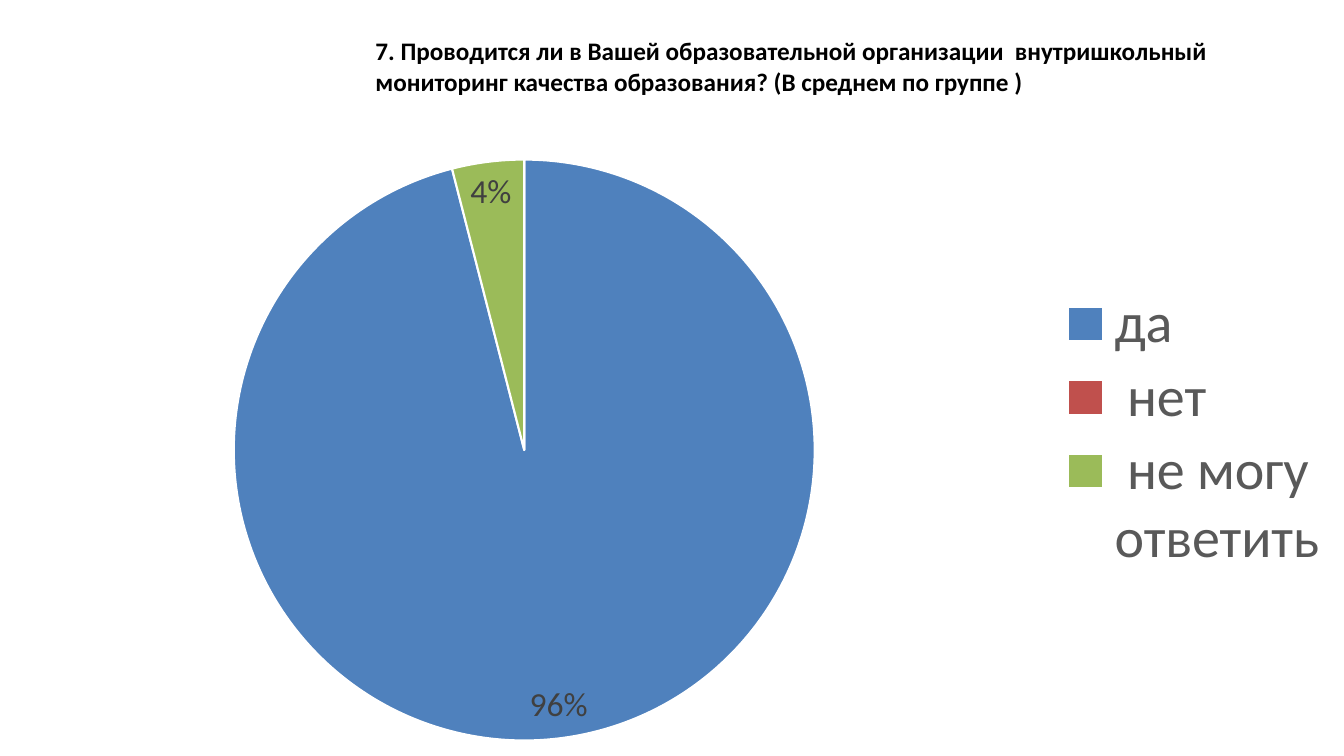
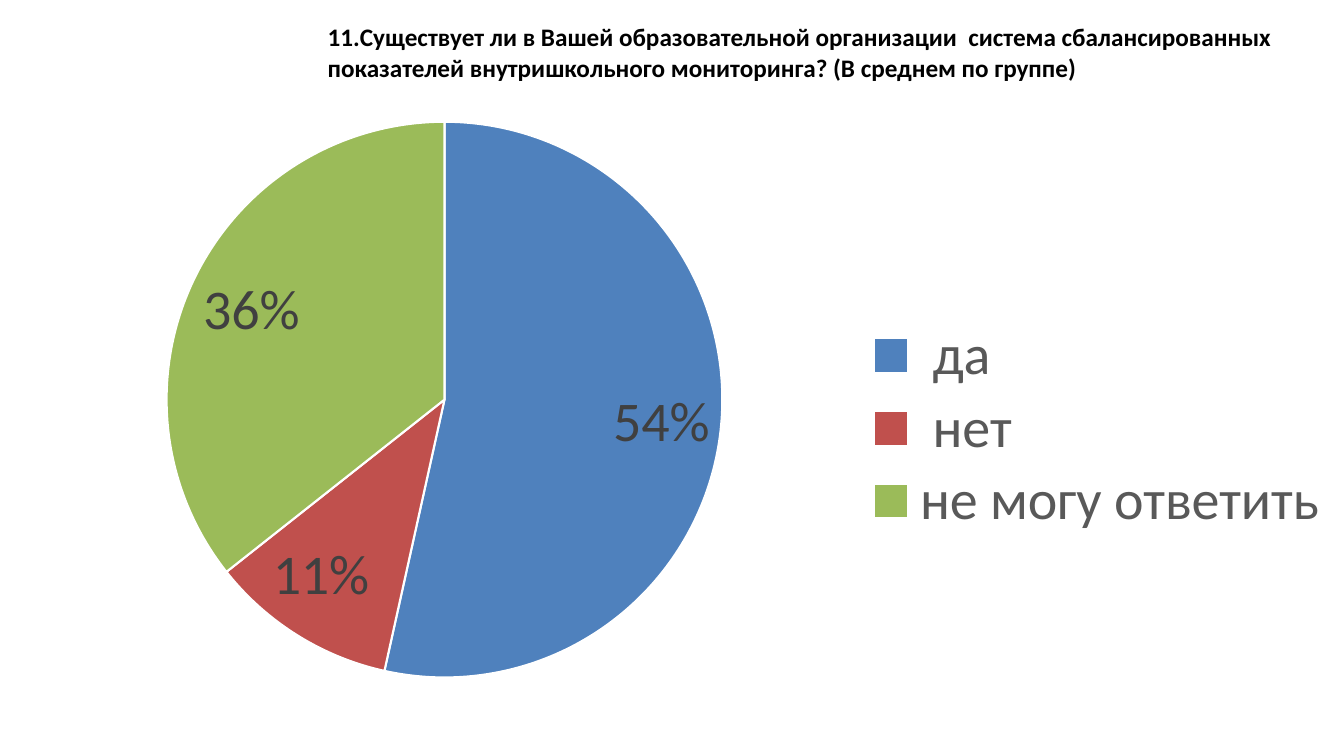
from lxml import etree
from pptx import Presentation
from pptx.chart.data import CategoryChartData
from pptx.dml.color import RGBColor
from pptx.enum.chart import XL_CHART_TYPE, XL_LABEL_POSITION, XL_LEGEND_POSITION
from pptx.enum.text import MSO_AUTO_SIZE
from pptx.oxml.ns import qn
from pptx.util import Pt

PIE = XL_CHART_TYPE.PIE
BEST_FIT = XL_LABEL_POSITION.BEST_FIT
LEGEND_RIGHT = XL_LEGEND_POSITION.RIGHT
GROW = MSO_AUTO_SIZE.SHAPE_TO_FIT_TEXT

FONT = "Calibri"
SLIDE_WIDTH, SLIDE_HEIGHT = 960, 540
LEGEND_SIZE = 40
COLORS = {
    "title": "000000",
    "legend": "595959",
    "label": "404040",
    "edge": "FFFFFF",
    "yes": "4F81BD",
    "no": "C0504D",
    "unsure": "9BBB59",
}
ANSWERS = ("yes", "no", "unsure")

# Boxes are (left, top, width, height) in points on the slide
QUESTIONS = [
    {
        "title": "7. Проводится ли в Вашей образовательной организации  внутришкольный "
                 "мониторинг качества образования? (В среднем по группе )",
        "title_box": (261, 22, 636, 73),
        "chart_box": (0, 71, 960, 469),
        "pie_box": (167, 114, 415, 415),
        "legend_box": (756, 203, 198, 210),
        "answers": {"да": 96, " нет": 0, " не могу ответить": 4},
        "label_size": 24,
    },
    {
        "title": "11.Существует ли в Вашей образовательной организации  система "
                 "сбалансированных показателей внутришкольного мониторинга? "
                 "(В среднем по группе)",
        "title_box": (227, 12, 714, 73),
        "chart_box": (0, 77, 960, 454),
        "pie_box": (119, 87, 397, 397),
        "legend_box": (617, 226, 336, 160),
        "answers": {" да": 54, " нет": 11, "не могу ответить": 36},
        "label_size": 40,
    },
]


def rgb(name):
    return RGBColor.from_string(COLORS[name])


def style_font(font, size, color, bold=False):
    font.name = FONT
    font.size = Pt(size)
    font.bold = bold
    font.color.rgb = rgb(color)


def add_text(slide, text, box, size=18, color="title", bold=False):
    frame = slide.shapes.add_textbox(*map(Pt, box)).text_frame
    frame.word_wrap = True
    frame.auto_size = GROW
    run = frame.paragraphs[0].add_run()
    run.text = text
    style_font(run.font, size, color, bold)


def manual_layout(box, chart_box, inner=False):
    """Turn a slide box into a layout given as fractions of the chart."""
    left, top, width, height = box
    chart_left, chart_top, chart_width, chart_height = chart_box
    settings = [("layoutTarget", "inner")] if inner else []
    settings += [
        ("xMode", "edge"),
        ("yMode", "edge"),
        ("x", (left - chart_left) / chart_width),
        ("y", (top - chart_top) / chart_height),
        ("w", width / chart_width),
        ("h", height / chart_height),
    ]
    layout = etree.Element(qn("c:layout"))
    manual = etree.SubElement(layout, qn("c:manualLayout"))
    for tag, value in settings:
        etree.SubElement(manual, qn("c:" + tag)).set("val", str(value))
    return layout


def place_parts(chart, question):
    chart_box = question["chart_box"]
    plot_area = chart.element.find(".//" + qn("c:plotArea"))
    legend = chart.element.find(".//" + qn("c:legend"))
    for part in (plot_area, legend):
        for old in part.findall(qn("c:layout")):
            part.remove(old)
    plot_area.insert(0, manual_layout(question["pie_box"], chart_box, inner=True))
    legend.find(qn("c:legendPos")).addnext(
        manual_layout(question["legend_box"], chart_box))


def add_pie(slide, question):
    answers = question["answers"]
    data = CategoryChartData()
    data.categories = list(answers)
    data.add_series("Series 1", list(answers.values()))
    chart = slide.shapes.add_chart(
        PIE, *map(Pt, question["chart_box"]), data).chart
    chart.has_title = False
    style_font(chart.font, 10, "title")

    # Slices
    plot = chart.plots[0]
    plot.vary_by_categories = True
    for index, answer in enumerate(ANSWERS):
        slice_format = plot.series[0].points[index].format
        slice_format.fill.solid()
        slice_format.fill.fore_color.rgb = rgb(answer)
        slice_format.line.color.rgb = rgb("edge")
        slice_format.line.width = Pt(1.5)

    # Labels: whole percentages, nothing for zero
    plot.has_data_labels = True
    labels = plot.data_labels
    labels.show_value = True
    labels.show_percentage = False
    labels.number_format = '0"%";;'
    labels.number_format_is_linked = False
    labels.position = BEST_FIT
    style_font(labels.font, question["label_size"], "label")

    # Legend
    chart.has_legend = True
    chart.legend.position = LEGEND_RIGHT
    chart.legend.include_in_layout = False
    style_font(chart.legend.font, LEGEND_SIZE, "legend")
    place_parts(chart, question)


def main():
    deck = Presentation()
    deck.slide_width, deck.slide_height = Pt(SLIDE_WIDTH), Pt(SLIDE_HEIGHT)
    blank = deck.slide_layouts[6]
    for question in QUESTIONS:
        slide = deck.slides.add_slide(blank)
        add_text(slide, question["title"], question["title_box"], bold=True)
        add_pie(slide, question)
    deck.save("out.pptx")


if __name__ == "__main__":
    main()
